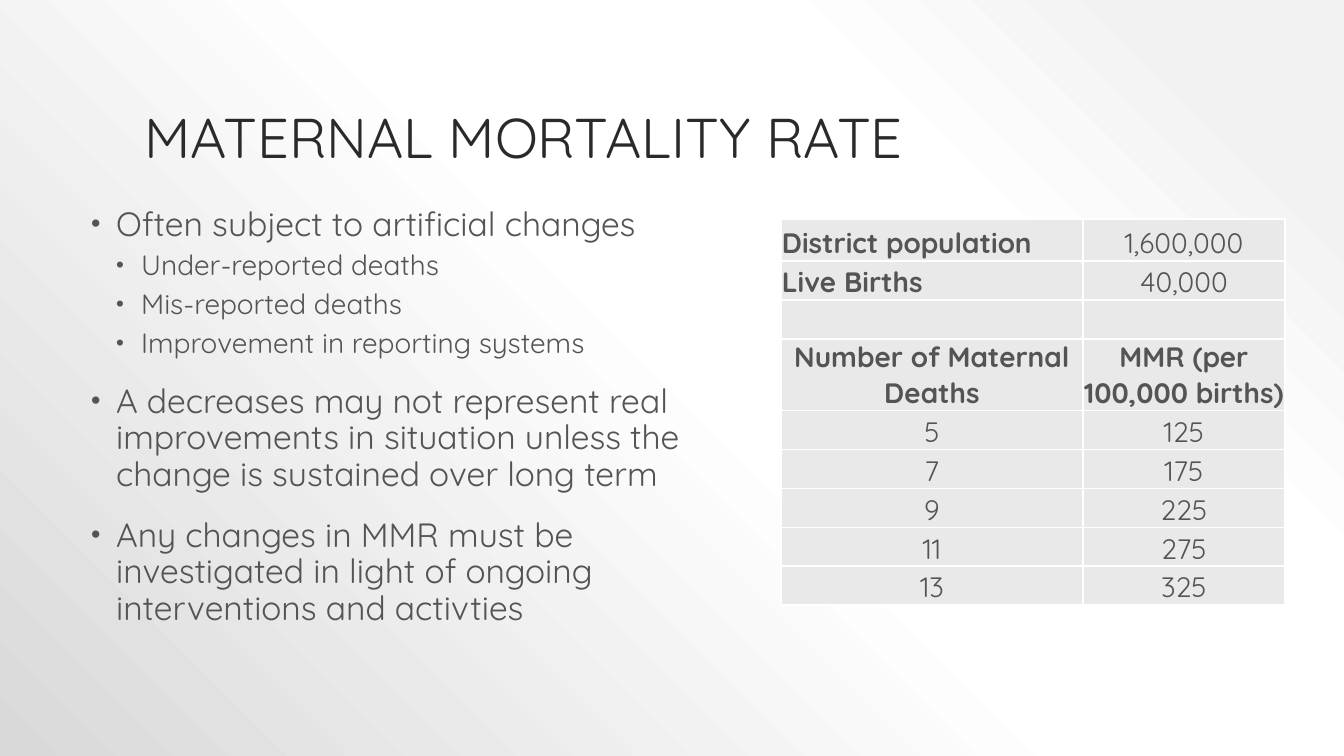
"""Build the maternal mortality rate slide."""
from lxml.etree import SubElement
from pptx import Presentation
from pptx.dml.color import RGBColor
from pptx.enum.text import MSO_ANCHOR, MSO_AUTO_SIZE, PP_ALIGN
from pptx.oxml import parse_xml
from pptx.oxml.ns import nsdecls, qn
from pptx.util import Pt

TITLE = "MATERNAL MORTALITY RATE"
POINTS = [
    (0, "Often subject to artificial changes"),
    (1, "Under-reported deaths"),
    (1, "Mis-reported deaths"),
    (1, "Improvement in reporting systems"),
    (0, "A decreases may not represent real improvements in situation "
        "unless the change is sustained over long term"),
    (0, "Any changes in MMR must be investigated in light of ongoing "
        "interventions and activties"),
]
FACTS = [("District population", "1,600,000"), ("Live Births", "40,000")]
HEADS = ("Number of Maternal Deaths", "MMR (per 100,000 births)")
RATES = [("5", "125"), ("7", "175"), ("9", "225"), ("11", "275"), ("13", "325")]
ROWS = FACTS + [("", ""), HEADS] + RATES
HEAD = len(FACTS) + 1

FONT, INK, GREY, PALE, WHITE = "Quicksand", "2A2A2A", "545454", "E9E9E9", "FFFFFF"
STOPS = [(10, "F2F2F2"), (28, WHITE), (48, WHITE), (100, "D9D9D9")]
LEVELS = [
    {"size": 24, "left": 30, "before": 18},
    {"size": 20, "left": 55, "before": 6},
]
HANG = 25
SCALE = 914400 / 100.8
TITLE_BOX = (134, 30, 1076, 146)
BODY_BOX = (76, 202, 655, 479)
TABLE_BOX = (781, 219, 504, 386)
COLS = (302, 202)
TALL = {0: 42, HEAD: 64}
ROW = 39


def px(num):
    """Turn px into EMU."""
    return round(num * SCALE)


def tint(code):
    """Turn a hex string into a colour."""
    return RGBColor.from_string(code)


def assign(item, values):
    """Set each named attribute of an item."""
    for name, value in values.items():
        setattr(item, name, value)


def place(shape, box):
    """Move and size a shape."""
    assign(shape, dict(zip(("left", "top", "width", "height"), map(px, box))))


def write(para, text, size, color, bold=False):
    """Add one formatted run."""
    run = para.add_run()
    run.text = text
    assign(run.font, {"name": FONT, "size": Pt(size), "bold": bold})
    run.font.color.rgb = tint(color)


def bullet(para, left):
    """Give a paragraph a hanging bullet."""
    props = para._p.get_or_add_pPr()
    props.set("marL", str(px(left)))
    props.set("indent", str(-px(HANG)))
    shade = SubElement(props, qn("a:buClr"))
    SubElement(shade, qn("a:srgbClr"), val=GREY)
    SubElement(props, qn("a:buSzPct"), val="80000")
    SubElement(props, qn("a:buFont"), typeface="Arial")
    SubElement(props, qn("a:buChar"), char="•")


def border(cell):
    """Draw thin white lines around a cell."""
    props = cell._tc.get_or_add_tcPr()
    for side in "LRTB":
        line = SubElement(props, qn(f"a:ln{side}"), w=str(Pt(1)))
        fill = SubElement(line, qn("a:solidFill"))
        SubElement(fill, qn("a:srgbClr"), val=WHITE)


def paint(slide):
    """Fill the background with a gradient from the top right."""
    stops = "".join(
        f'<a:gs pos="{pos * 1000}"><a:srgbClr val="{code}"/></a:gs>'
        for pos, code in STOPS)
    slide.element.cSld.insert(0, parse_xml(
        f'<p:bg {nsdecls("p", "a")}><p:bgPr><a:gradFill rotWithShape="1">'
        f'<a:gsLst>{stops}</a:gsLst><a:path path="circle">'
        '<a:fillToRect l="100000" b="100000"/></a:path></a:gradFill>'
        '<a:effectLst/></p:bgPr></p:bg>'))


def add_title(shape):
    """Write the title."""
    place(shape, TITLE_BOX)
    frame = shape.text_frame
    assign(frame, {"vertical_anchor": MSO_ANCHOR.BOTTOM, "word_wrap": True,
                   "auto_size": MSO_AUTO_SIZE.NONE})
    para = frame.paragraphs[0]
    assign(para, {"alignment": PP_ALIGN.LEFT, "line_spacing": 0.9})
    write(para, TITLE, 40, INK)


def add_body(shape):
    """Write the bullet list."""
    place(shape, BODY_BOX)
    frame = shape.text_frame
    assign(frame, {"vertical_anchor": MSO_ANCHOR.TOP, "word_wrap": True,
                   "auto_size": MSO_AUTO_SIZE.NONE})
    for num, (level, text) in enumerate(POINTS):
        para = frame.add_paragraph() if num else frame.paragraphs[0]
        form = LEVELS[level]
        assign(para, {"level": level, "line_spacing": 0.9,
                      "space_before": Pt(form["before"] if num else 0)})
        bullet(para, form["left"])
        write(para, text, form["size"], GREY)


def add_grid(slide):
    """Add the table of deaths and rates."""
    table = slide.shapes.add_table(
        len(ROWS), len(COLS), *map(px, TABLE_BOX)).table
    assign(table, {"first_row": False, "horz_banding": False})
    for col, width in zip(table.columns, COLS):
        col.width = px(width)
    for num, texts in enumerate(ROWS):
        table.rows[num].height = px(TALL.get(num, ROW))
        for side, text in enumerate(texts):
            cell = table.cell(num, side)
            label = num < len(FACTS) and side == 0
            assign(cell, {"margin_left": px(1), "margin_right": px(1),
                          "margin_top": px(1), "margin_bottom": 0,
                          "vertical_anchor": MSO_ANCHOR.BOTTOM})
            border(cell)
            cell.fill.solid()
            cell.fill.fore_color.rgb = tint(PALE)
            if text:
                para = cell.text_frame.paragraphs[0]
                para.alignment = PP_ALIGN.LEFT if label else PP_ALIGN.CENTER
                write(para, text, 20, GREY, label or num == HEAD)


def main():
    """Build and save the slide."""
    deck = Presentation()
    assign(deck, {"slide_width": px(1344), "slide_height": px(756)})
    slide = deck.slides.add_slide(deck.slide_layouts[1])
    paint(slide)
    add_title(slide.shapes.title)
    add_body(slide.placeholders[1])
    add_grid(slide)
    deck.save("out.pptx")


if __name__ == "__main__":
    main()
